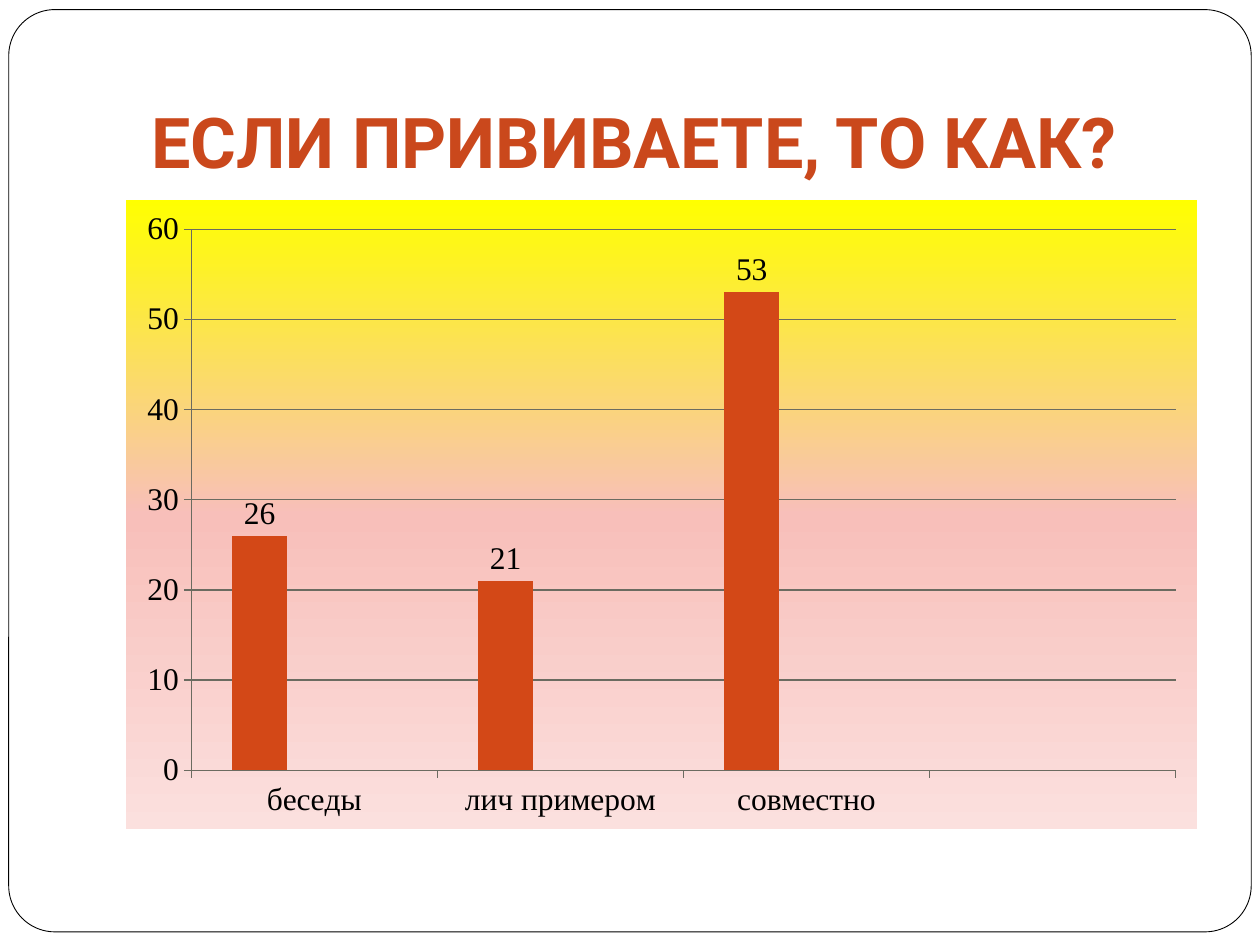
from dataclasses import dataclass

import lxml.etree
import pptx
import pptx.chart.data
import pptx.dml.color
import pptx.enum.chart
import pptx.enum.shapes
import pptx.enum.text
import pptx.oxml
import pptx.oxml.ns
import pptx.util

Pt = pptx.util.Pt

COLORS = {
    "card": "FFFFFF",
    "ink": "000000",
    "title": "CA481C",
    "grid": "6B6B60",
    "top": "FFFF00",
    "middle": "F8BFBA",
    "bottom": "FBE0DE",
}
CATEGORIES = ["беседы", "лич примером", "совместно", ""]


@dataclass
class Answers:
    name: str
    values: list
    color: str


@dataclass
class Stop:
    percent: int
    color: str


ANSWERS = [
    Answers("Series 1", [26, 21, 53, None], "D34817"),
    Answers("Series 2", [None] * 4, "9B2D1F"),
    Answers("Series 3", [None] * 4, "A28E6A"),
]
BACKDROP = [
    Stop(0, COLORS["top"]),
    Stop(50, COLORS["middle"]),
    Stop(100, COLORS["bottom"]),
]


def rgb(color: str) -> pptx.dml.color.RGBColor:
    return pptx.dml.color.RGBColor.from_string(color)


def add_card(slide) -> None:
    card = slide.shapes.add_shape(
        pptx.enum.shapes.MSO_SHAPE.ROUNDED_RECTANGLE, Pt(5), Pt(5.5), Pt(710), Pt(527)
    )
    card.adjustments[0] = 0.05
    card.shadow.inherit = False
    card.fill.solid()
    card.fill.fore_color.rgb = rgb(COLORS["card"])
    card.line.color.rgb = rgb(COLORS["ink"])
    card.line.width = Pt(0.5)
    slide.shapes._spTree.insert(2, card._element)


def write_title(title) -> None:
    title.left, title.top, title.width, title.height = Pt(22), Pt(21.5), Pt(680.5), Pt(90)
    frame = title.text_frame
    frame.text = "ЕСЛИ ПРИВИВАЕТЕ, ТО КАК?"
    frame.word_wrap = True
    frame.auto_size = pptx.enum.text.MSO_AUTO_SIZE.NONE
    frame.vertical_anchor = pptx.enum.text.MSO_ANCHOR.BOTTOM
    frame.margin_bottom = Pt(7.2)
    heading = frame.paragraphs[0]
    heading.alignment = pptx.enum.text.PP_ALIGN.CENTER
    font = heading.runs[0].font
    font.name, font.size, font.bold = "Roboto", Pt(40), True
    font.color.rgb = rgb(COLORS["title"])


def fill_backdrop(chart, stops: list[Stop]) -> None:
    stop_xml = "".join(
        f'<a:gs pos="{stop.percent * 1000}"><a:srgbClr val="{stop.color}"/></a:gs>'
        for stop in stops
    )
    backdrop = pptx.oxml.parse_xml(
        f'<c:spPr {pptx.oxml.ns.nsdecls("c", "a")}><a:gradFill><a:gsLst>{stop_xml}</a:gsLst>'
        '<a:lin ang="5400000" scaled="0"/></a:gradFill><a:ln><a:noFill/></a:ln></c:spPr>'
    )
    chart._chartSpace.find(pptx.oxml.ns.qn("c:chart")).addnext(backdrop)


def style_axis(axis) -> None:
    axis.major_tick_mark = pptx.enum.chart.XL_TICK_MARK.OUTSIDE
    axis.minor_tick_mark = pptx.enum.chart.XL_TICK_MARK.NONE
    axis.format.line.color.rgb = rgb(COLORS["grid"])
    axis.format.line.width = Pt(0.75)


def style_series(series, answers: Answers) -> None:
    series.format.fill.solid()
    series.format.fill.fore_color.rgb = rgb(answers.color)
    series.invert_if_negative = False


def add_answer_chart(slide) -> None:
    data = pptx.chart.data.CategoryChartData()
    data.categories = CATEGORIES
    for answers in ANSWERS:
        data.add_series(answers.name, answers.values)
    chart = slide.shapes.add_chart(
        pptx.enum.chart.XL_CHART_TYPE.COLUMN_CLUSTERED,
        Pt(72), Pt(114), Pt(612), Pt(360), data,
    ).chart
    chart.has_title = False
    chart.has_legend = False
    chart.font.name, chart.font.size = "Times New Roman", Pt(18)
    chart.font.color.rgb = rgb(COLORS["ink"])
    fill_backdrop(chart, BACKDROP)

    style_axis(chart.category_axis)
    scale = chart.value_axis
    style_axis(scale)
    scale.minimum_scale, scale.maximum_scale, scale.major_unit = 0, 60, 10
    scale.has_major_gridlines = True
    scale.major_gridlines.format.line.color.rgb = rgb(COLORS["grid"])
    scale.major_gridlines.format.line.width = Pt(0.75)

    plot = chart.plots[0]
    plot.vary_by_categories = False
    plot.gap_width, plot.overlap = 150, 0
    for series, answers in zip(plot.series, ANSWERS):
        style_series(series, answers)
    labels = plot.series[0].data_labels
    labels.show_value = True
    labels.position = pptx.enum.chart.XL_LABEL_POSITION.OUTSIDE_END


def main() -> None:
    presentation = pptx.Presentation()
    presentation.slide_width, presentation.slide_height = Pt(720), Pt(540)
    slide = presentation.slides.add_slide(presentation.slide_layouts[5])
    add_card(slide)
    write_title(slide.shapes.title)
    add_answer_chart(slide)
    presentation.save("out.pptx")


if __name__ == "__main__":
    main()
